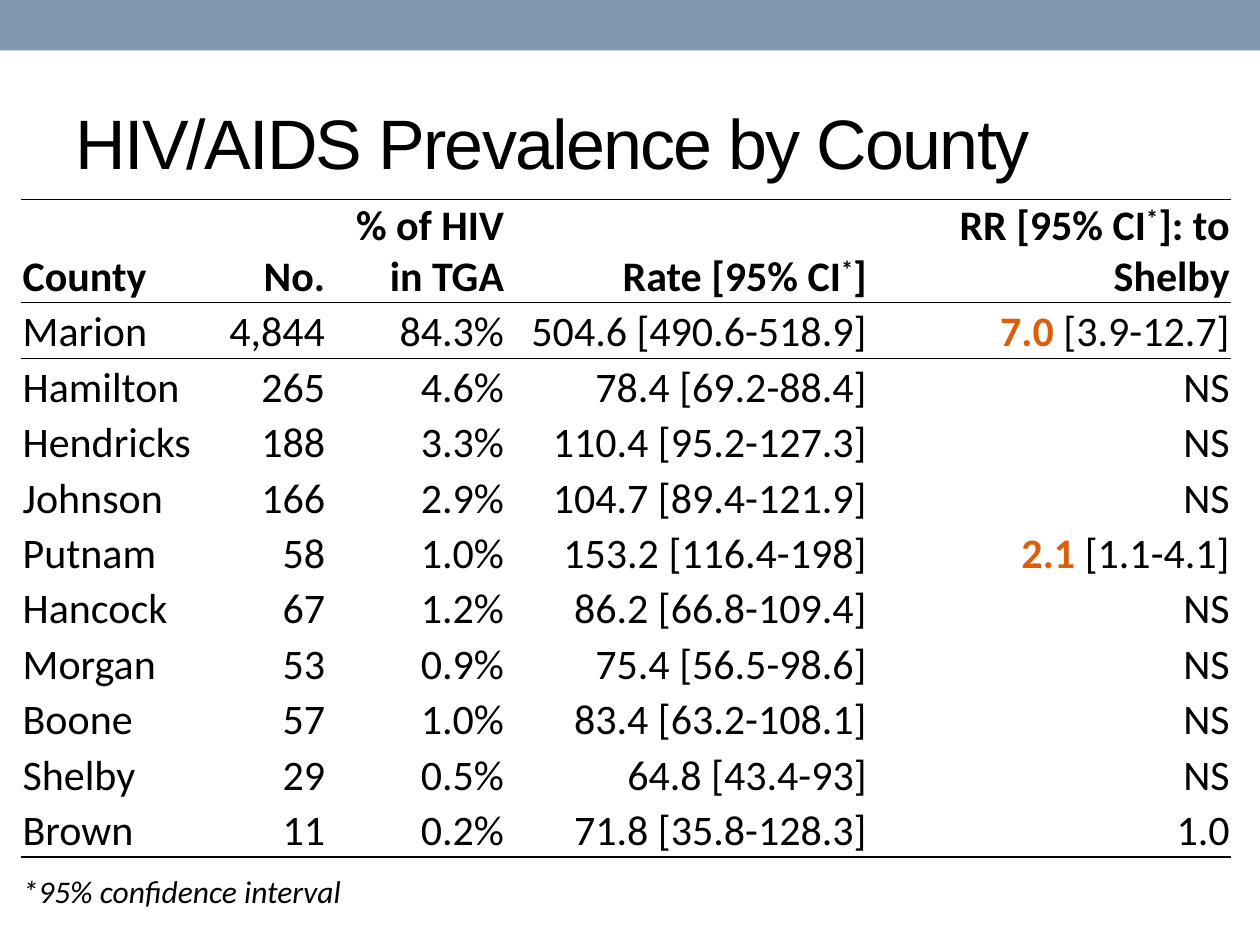
from pptx import Presentation
from pptx import util as u
from pptx.dml.color import RGBColor
from pptx.enum import shapes, text
from pptx.oxml import parse_xml
from pptx.oxml.ns import nsdecls

BLACK = RGBColor(0x00, 0x00, 0x00)
ORANGE = RGBColor(0xD9, 0x5F, 0x0E)
SLATE = RGBColor(0x7E, 0x97, 0xAD)

HEADER = [
    ["County"], ["No."], ["% of HIV in TGA"],
    ["Rate [95% CI", "*", "]"],
    ["RR [95% CI", "*", "]: to Shelby"],
]
COUNTIES = [
    ("Marion", "4,844", "84.3%", "504.6 [490.6-518.9]", "7.0", " [3.9-12.7]"),
    ("Hamilton", "265", "4.6%", "78.4 [69.2-88.4]", "", "NS"),
    ("Hendricks", "188", "3.3%", "110.4 [95.2-127.3]", "", "NS"),
    ("Johnson", "166", "2.9%", "104.7 [89.4-121.9]", "", "NS"),
    ("Putnam", "58", "1.0%", "153.2 [116.4-198]", "2.1 ", "[1.1-4.1]"),
    ("Hancock", "67", "1.2%", "86.2 [66.8-109.4]", "", "NS"),
    ("Morgan", "53", "0.9%", "75.4 [56.5-98.6]", "", "NS"),
    ("Boone", "57", "1.0%", "83.4 [63.2-108.1]", "", "NS"),
    ("Shelby", "29", "0.5%", "64.8 [43.4-93]", "", "NS"),
    ("Brown", "11", "0.2%", "71.8 [35.8-128.3]", "", "1.0"),
]
COLUMNS = [1.5, 0.92, 1.42, 2.88, 2.88]
HEADER_ROW, ROW = 0.5, 0.44
NO_STYLE = "{2D5ABB26-0587-4C30-8999-92F81FD0307C}"


def add_run(paragraph, words, size=24, bold=False, color=BLACK, face="Calibri"):
    run = paragraph.add_run()
    run.text = words
    run.font.size = u.Pt(size)
    run.font.bold = bold
    run.font.name = face
    run.font.color.rgb = color
    return run


def add_rule(cell, side, points):
    cell._tc.get_or_add_tcPr().append(parse_xml(
        f'<a:ln{side} {nsdecls("a")} w="{u.Pt(points)}"><a:solidFill>'
        f'<a:srgbClr val="{BLACK}"/></a:solidFill></a:ln{side}>'))


prs = Presentation()
prs.slide_width, prs.slide_height = u.Inches(10), u.Inches(7.5)
slide = prs.slides.add_slide(prs.slide_layouts[5])

band = slide.shapes.add_shape(
    shapes.MSO_SHAPE.RECTANGLE, 0, 0, prs.slide_width, u.Inches(0.4))
band.shadow.inherit = False
band.fill.solid()
band.fill.fore_color.rgb = SLATE
band.line.fill.background()

title = slide.shapes.title
title.left, title.top = u.Inches(0.5), u.Inches(0.58)
title.width, title.height = u.Inches(9), u.Inches(1.08)
title.text_frame.vertical_anchor = text.MSO_ANCHOR.MIDDLE
heading = title.text_frame.paragraphs[0]
heading.alignment = text.PP_ALIGN.LEFT
heading_run = add_run(heading, "HIV/AIDS Prevalence by County", 40, face="Arial")
heading_run._r.get_or_add_rPr().set("spc", "-100")

last = len(COUNTIES)
footnote_row = last + 1
prevalence = slide.shapes.add_table(
    footnote_row + 1, len(COLUMNS), u.Inches(0.17), u.Inches(1.58),
    u.Inches(sum(COLUMNS)), u.Inches(HEADER_ROW + ROW * footnote_row)).table
prevalence.first_row = prevalence.horz_banding = False
prevalence._tbl.tblPr.find("{*}tableStyleId").text = NO_STYLE
for column, width in zip(prevalence.columns, COLUMNS):
    column.width = u.Inches(width)
for r, row in enumerate(prevalence.rows):
    row.height = u.Inches(ROW if r else HEADER_ROW)
    for c, cell in enumerate(row.cells):
        cell.vertical_anchor = text.MSO_ANCHOR.BOTTOM
        cell.margin_left = cell.margin_right = cell.margin_top = u.Inches(0.01)
        cell.margin_bottom = 0
        if r in (0, 1):
            add_rule(cell, "T", 0.5)
        if r == footnote_row:
            add_rule(cell, "T", 1)
        if r == 0:
            add_rule(cell, "B", 0.5)
        if r == last:
            add_rule(cell, "B", 1)
        cell.fill.background()
        if c:
            cell.text_frame.paragraphs[0].alignment = text.PP_ALIGN.RIGHT

for c, parts in enumerate(HEADER):
    label = prevalence.cell(0, c).text_frame.paragraphs[0]
    for part in parts:
        run = add_run(label, part, bold=True)
        if part == "*":
            run._r.get_or_add_rPr().set("baseline", "30000")

for r, (*figures, ratio, interval) in enumerate(COUNTIES, 1):
    for c, figure in enumerate(figures):
        add_run(prevalence.cell(r, c).text_frame.paragraphs[0], figure)
    risk = prevalence.cell(r, len(figures)).text_frame.paragraphs[0]
    if ratio:
        add_run(risk, ratio, bold=True, color=ORANGE)
    add_run(risk, interval)

footnote = prevalence.cell(footnote_row, 0)
footnote.merge(prevalence.cell(footnote_row, len(COLUMNS) - 1))
note = add_run(footnote.text_frame.paragraphs[0], "*95% confidence interval", 18)
note.font.italic = True

prs.save("out.pptx")
